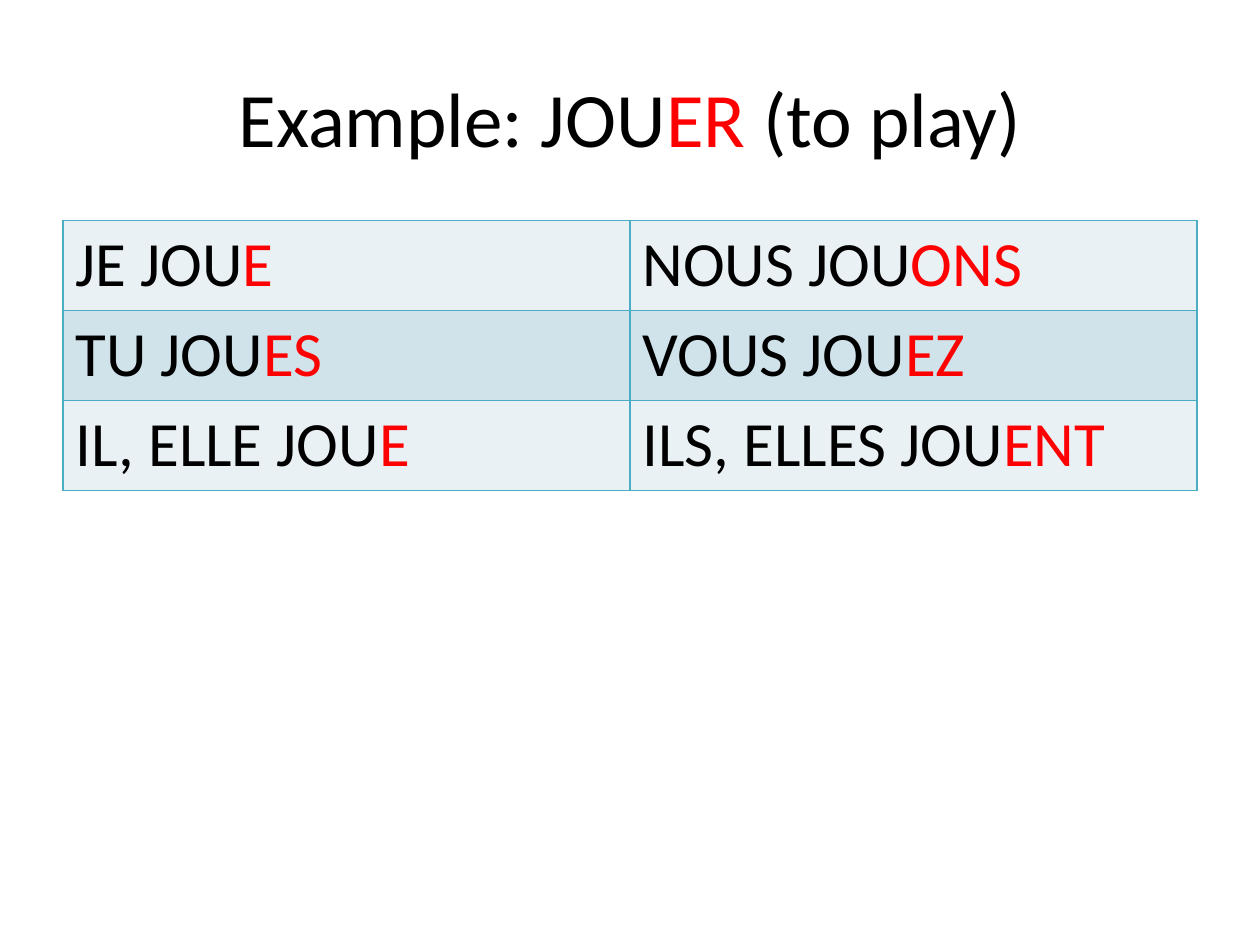
import pptx
import pptx.util
import pptx.dml.color
import pptx.enum.text
import pptx.oxml
import lxml.etree

Pt = pptx.util.Pt
RGBColor = pptx.dml.color.RGBColor

BLACK = RGBColor(0x00, 0x00, 0x00)
RED = RGBColor(0xFF, 0x00, 0x00)
BORDER = RGBColor(0x4B, 0xAC, 0xC6)
BANDS = (RGBColor(0xE9, 0xF1, 0xF5), RGBColor(0xD0, 0xE3, 0xEA))
FONT = "Calibri"

# Content: plain stem and red ending alternate
TITLE = ("Example: JOU", "ER", " (to play)")
CONJUGATION = [
    (("JE JOU", "E"), ("NOUS JOU", "ONS")),
    (("TU JOU", "ES"), ("VOUS JOU", "EZ")),
    (("IL, ELLE JOU", "E"), ("ILS, ELLES JOU", "ENT")),
]

# Layout in points
PAGE_WIDTH, PAGE_HEIGHT = 720, 540
MARGIN = 36
CONTENT_WIDTH = PAGE_WIDTH - 2 * MARGIN
TITLE_TOP, TITLE_HEIGHT, TITLE_SIZE = 21.6, 90, 44
TABLE_TOP, ROW_HEIGHT, TABLE_SIZE = 126, 51.4, 36


def add_spans(para, parts, size):
    for index, text in enumerate(parts):
        span = para.add_run()
        span.text = text
        span.font.name = FONT
        span.font.size = Pt(size)
        span.font.color.rgb = RED if index % 2 else BLACK


def add_borders(cell):
    properties = cell._tc.get_or_add_tcPr()
    for index, side in enumerate(("lnL", "lnR", "lnT", "lnB")):
        line = pptx.oxml.parse_xml(
            f'<a:{side} xmlns:a="http://schemas.openxmlformats.org/drawingml/2006/main" '
            f'w="{Pt(1)}"><a:solidFill><a:srgbClr val="{BORDER}"/></a:solidFill></a:{side}>'
        )
        properties.insert(index, line)


deck = pptx.Presentation()
deck.slide_width, deck.slide_height = Pt(PAGE_WIDTH), Pt(PAGE_HEIGHT)
page = deck.slides.add_slide(deck.slide_layouts[6])

# Title
box = page.shapes.add_textbox(
    Pt(MARGIN), Pt(TITLE_TOP), Pt(CONTENT_WIDTH), Pt(TITLE_HEIGHT))
box.text_frame.word_wrap = True
box.text_frame.vertical_anchor = pptx.enum.text.MSO_ANCHOR.MIDDLE
heading = box.text_frame.paragraphs[0]
heading.alignment = pptx.enum.text.PP_ALIGN.CENTER
add_spans(heading, TITLE, TITLE_SIZE)

# Conjugation table
row_count, column_count = len(CONJUGATION), len(CONJUGATION[0])
table = page.shapes.add_table(
    row_count, column_count, Pt(MARGIN), Pt(TABLE_TOP),
    Pt(CONTENT_WIDTH), Pt(ROW_HEIGHT * row_count)).table
table.first_row = False
for row_index, forms in enumerate(CONJUGATION):
    for column_index, parts in enumerate(forms):
        cell = table.cell(row_index, column_index)
        cell.fill.solid()
        cell.fill.fore_color.rgb = BANDS[row_index % 2]
        add_borders(cell)
        add_spans(cell.text_frame.paragraphs[0], parts, TABLE_SIZE)

deck.save("out.pptx")
